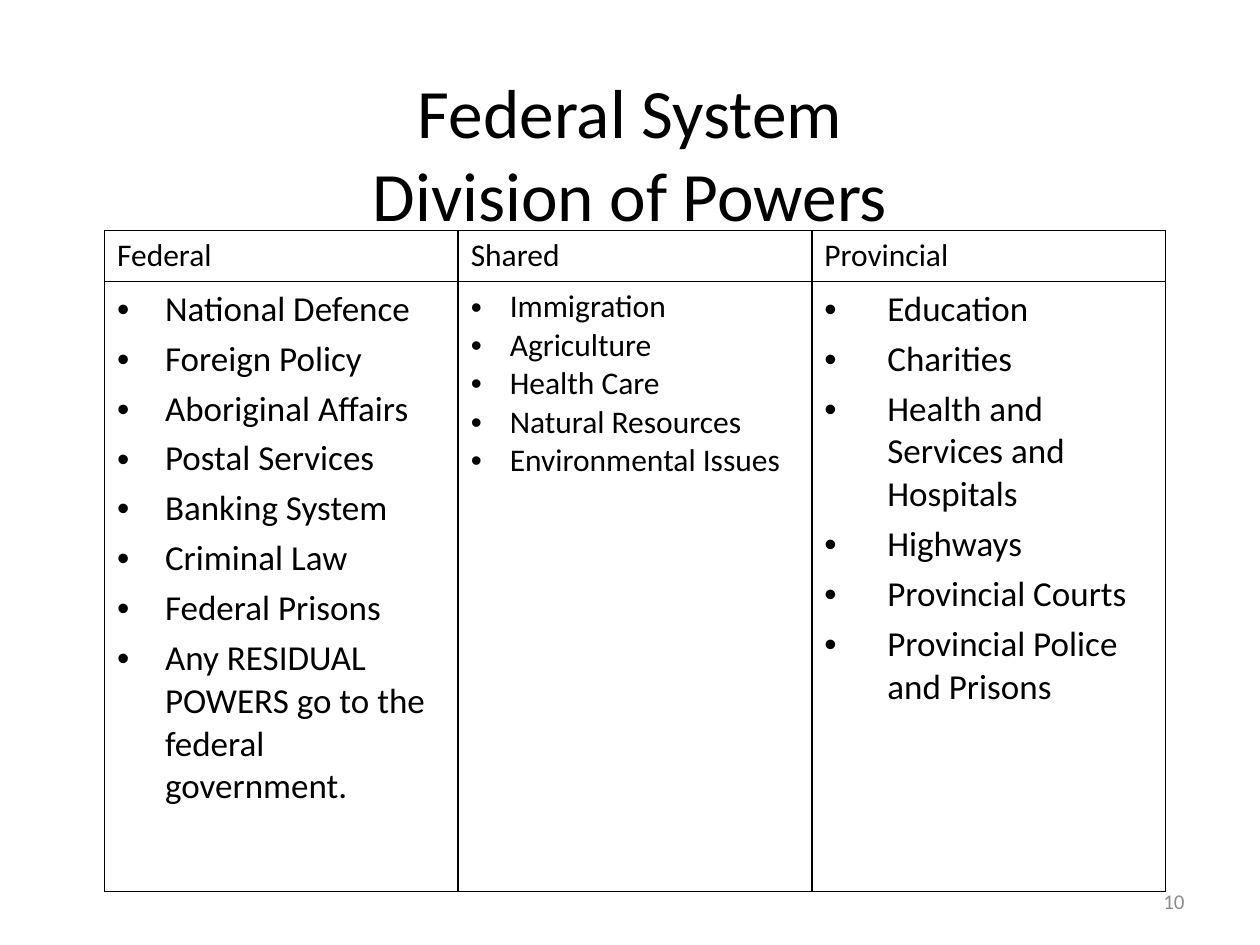
from lxml.etree import SubElement
from pptx import Presentation
from pptx.dml.color import RGBColor
from pptx.enum.text import MSO_ANCHOR, MSO_AUTO_SIZE, PP_ALIGN
from pptx.oxml.ns import qn
from pptx.util import Inches, Pt

BLACK = RGBColor(0x00, 0x00, 0x00)
GRAY = RGBColor(0x8C, 0x8C, 0x8C)
FONT = "Calibri"

HEADER_HEIGHT, BODY_HEIGHT = 0.4, 4.84

# Each power level: its items, with text size, hanging indent and space before
POWERS = {
    "Federal": {
        "size": 20, "indent": 0.38, "space": 4,
        "items": ["National Defence", "Foreign Policy", "Aboriginal Affairs",
                  "Postal Services", "Banking System", "Criminal Law",
                  "Federal Prisons",
                  "Any RESIDUAL POWERS go to the federal government."],
    },
    "Shared": {
        "size": 18, "indent": 0.31, "space": 0,
        "items": ["Immigration", "Agriculture", "Health Care",
                  "Natural Resources", "Environmental Issues"],
    },
    "Provincial": {
        "size": 20, "indent": 0.5, "space": 4,
        "items": ["Education", "Charities",
                  "Health and Services and Hospitals", "Highways",
                  "Provincial Courts", "Provincial Police and Prisons"],
    },
}


def format_font(font, size, color=BLACK):
    for name, value in {"name": FONT, "size": Pt(size), "bold": False}.items():
        setattr(font, name, value)
    font.color.rgb = color


def add_bullet(paragraph, indent):
    """Give the paragraph a round bullet with a hanging indent in inches."""
    properties = paragraph._p.get_or_add_pPr()
    properties.set("marL", str(Inches(indent)))
    properties.set("indent", str(-Inches(indent)))
    SubElement(properties, qn("a:buFont"), typeface="Arial")
    SubElement(properties, qn("a:buChar"), char="•")


def outline_cell(cell):
    """Draw thin black borders round an unfilled cell."""
    properties = cell._tc.get_or_add_tcPr()
    for side in ("lnL", "lnR", "lnT", "lnB"):
        border = SubElement(properties, qn(f"a:{side}"), w=str(Pt(1)))
        fill = SubElement(border, qn("a:solidFill"))
        SubElement(fill, qn("a:srgbClr"), val=str(BLACK))
    cell.fill.background()


def place_title(slide, left, top, width, height):
    title = slide.shapes.title
    box = {"left": left, "top": top, "width": width, "height": height}
    for name, value in box.items():
        setattr(title, name, Inches(value))
    frame = title.text_frame
    frame.text = "Federal System\vDivision of Powers"
    frame.auto_size = MSO_AUTO_SIZE.NONE
    frame.vertical_anchor = MSO_ANCHOR.MIDDLE
    paragraph = frame.paragraphs[0]
    paragraph.alignment = PP_ALIGN.CENTER
    for run in paragraph.runs:
        format_font(run.font, 39.6)


def fill_powers(cell, powers):
    frame = cell.text_frame
    frame.text = "\n".join(powers["items"])
    for paragraph in frame.paragraphs:
        paragraph.space_before = Pt(powers["space"])
        add_bullet(paragraph, powers["indent"])
        format_font(paragraph.runs[0].font, powers["size"])


def add_powers_table(slide, left, top, width, height):
    box = map(Inches, (left, top, width, height))
    table = slide.shapes.add_table(2, len(POWERS), *box).table
    table.first_row = table.horz_banding = False
    table.rows[0].height = Inches(HEADER_HEIGHT)
    table.rows[1].height = Inches(BODY_HEIGHT)
    for column, (level, powers) in enumerate(POWERS.items()):
        header, body = table.cell(0, column), table.cell(1, column)
        header.text = level
        format_font(header.text_frame.paragraphs[0].runs[0].font, 18)
        fill_powers(body, powers)
        for cell in (header, body):
            outline_cell(cell)


def add_page_number(slide, left, top, width, height):
    box = map(Inches, (left, top, width, height))
    frame = slide.shapes.add_textbox(*box).text_frame
    frame.word_wrap = True
    frame.vertical_anchor = MSO_ANCHOR.MIDDLE
    frame.text = "10"
    paragraph = frame.paragraphs[0]
    paragraph.alignment = PP_ALIGN.RIGHT
    format_font(paragraph.runs[0].font, 12, GRAY)


def main():
    deck = Presentation()
    deck.slide_width, deck.slide_height = Inches(10), Inches(7.5)
    slide = deck.slides.add_slide(deck.slide_layouts.get_by_name("Title Only"))
    place_title(slide, 0.75, 0.67, 8.5, 1.08)
    add_powers_table(slide, 0.83, 1.83, 8.42, HEADER_HEIGHT + BODY_HEIGHT)
    add_page_number(slide, 7.17, 6.95, 2.33, 0.4)
    deck.save("out.pptx")


if __name__ == "__main__":
    main()
